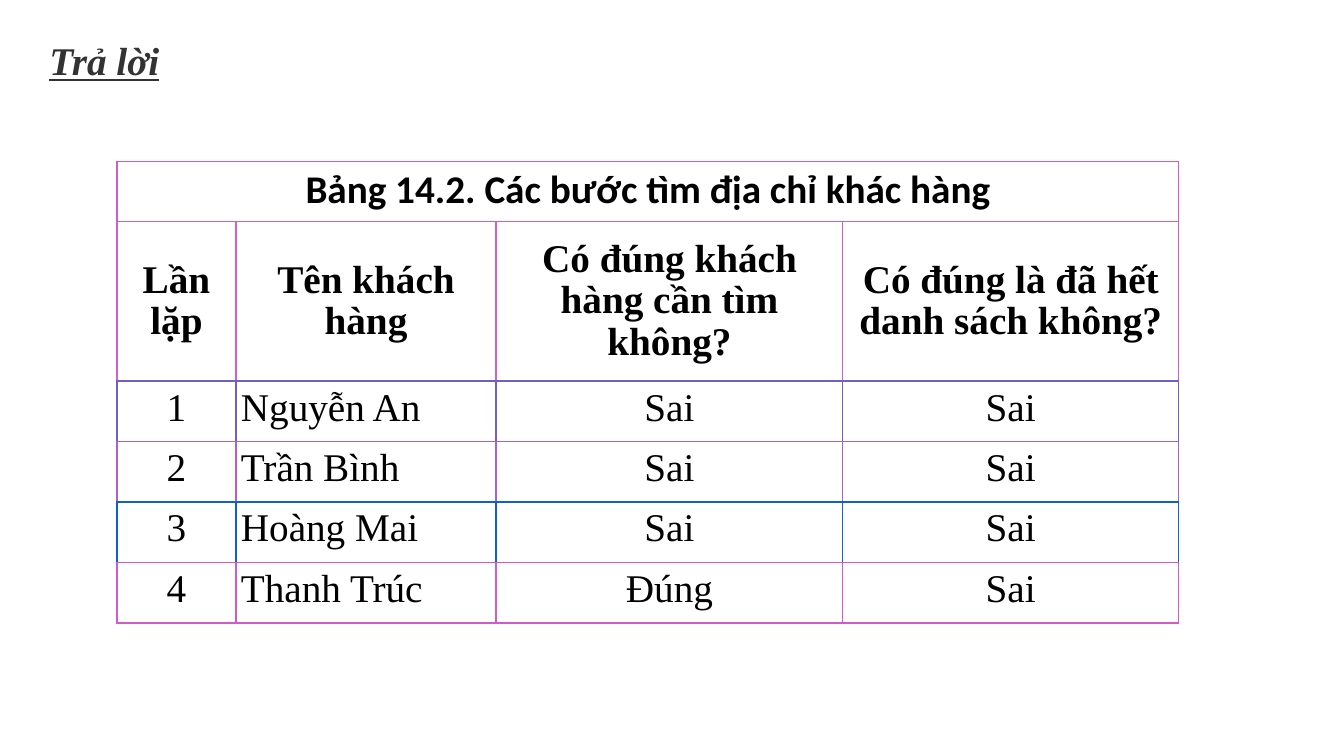
from lxml import etree
from pptx import Presentation
from pptx.dml.color import RGBColor
from pptx.enum import text as t
from pptx.oxml import ns
from pptx.util import Inches, Pt

COLORS = {"white": "FFFFFF", "black": "000000", "gray": "333333",
          "pink": "D05DC7", "rose": "D060C7", "violet": "705FC7",
          "purple": "B05FC7", "blue": "1061C7"}
SERIF, SANS = "Times New Roman", "Calibri"
TITLE = "Trả lời"
ROWS = [
    ["Bảng 14.2. Các bước tìm địa chỉ khác hàng", "", "", ""],
    ["Lần lặp", "Tên khách hàng", "Có đúng khách hàng cần tìm không?",
     "Có đúng là đã hết danh sách không?"],
    ["1", "Nguyễn An", "Sai", "Sai"],
    ["2", "Trần Bình", "Sai", "Sai"],
    ["3", "Hoàng Mai", "Sai", "Sai"],
    ["4", "Thanh Trúc", "Đúng", "Sai"],
]
WIDTHS = [1.18, 2.58, 3.44, 3.33]
HEIGHTS = [0.6, 1.58, 0.6, 0.6, 0.6, 0.6]
# Each row has its own border color; its bottom takes the next row's.
EDGES = ["pink", "rose", "violet", "purple", "blue", "pink", "pink"]


def rgb(name):
    return RGBColor.from_string(COLORS[name])


def style(para, face, color, bold):
    for run in para.runs:
        font = run.font
        font.name, font.size, font.bold = face, Pt(28), bold
        font.color.rgb = rgb(color)


def border(cell, edge, below):
    props = cell._tc.get_or_add_tcPr()
    for tag, color in (("lnL", edge), ("lnR", edge), ("lnT", edge), ("lnB", below)):
        line = etree.SubElement(props, ns.qn("a:" + tag), w=str(Pt(1)))
        fill = etree.SubElement(line, ns.qn("a:solidFill"))
        etree.SubElement(fill, ns.qn("a:srgbClr"), val=COLORS[color])


def fill_cell(cell, words, row, col):
    border(cell, EDGES[row], EDGES[row + 1])
    cell.fill.solid()
    cell.fill.fore_color.rgb = rgb("white")
    cell.margin_left = cell.margin_right = Inches(0.05)
    cell.margin_top = cell.margin_bottom = Inches(0.05)
    if not words:
        return
    cell.text_frame.text = words
    para = cell.text_frame.paragraphs[0]
    name = row > 1 and col == 1
    para.alignment = t.PP_ALIGN.LEFT if name else t.PP_ALIGN.CENTER
    if row == 1:
        cell.vertical_anchor = t.MSO_ANCHOR.MIDDLE
        para.line_spacing = 0.96
    style(para, SERIF if row else SANS, "black", row < 2)


def add_title(slide):
    title = slide.shapes.title
    title.left, title.top = Inches(0.39), Inches(0.31)
    title.width, title.height = Inches(2.13), Inches(0.57)
    title.fill.solid()
    title.fill.fore_color.rgb = rgb("white")
    frame = title.text_frame
    frame.text = TITLE
    frame.vertical_anchor = t.MSO_ANCHOR.MIDDLE
    frame.auto_size = t.MSO_AUTO_SIZE.SHAPE_TO_FIT_TEXT
    para = frame.paragraphs[0]
    para.alignment = t.PP_ALIGN.LEFT
    style(para, SERIF, "gray", True)
    font = para.runs[0].font
    font.italic = font.underline = True


def add_steps(slide):
    table = slide.shapes.add_table(
        len(ROWS), len(WIDTHS), Inches(1.16), Inches(1.6),
        Inches(sum(WIDTHS)), Inches(sum(HEIGHTS))).table
    table.first_row = table.horz_banding = False
    for col, width in zip(table.columns, WIDTHS):
        col.width = Inches(width)
    for row, height in zip(table.rows, HEIGHTS):
        row.height = Inches(height)
    table.cell(0, 0).merge(table.cell(0, len(WIDTHS) - 1))
    for r, row in enumerate(ROWS):
        for c, words in enumerate(row):
            fill_cell(table.cell(r, c), words, r, c)


def main():
    deck = Presentation()
    deck.slide_width, deck.slide_height = Inches(13.33), Inches(7.5)
    slide = deck.slides.add_slide(deck.slide_layouts[5])
    add_title(slide)
    add_steps(slide)
    deck.save("out.pptx")


if __name__ == "__main__":
    main()
